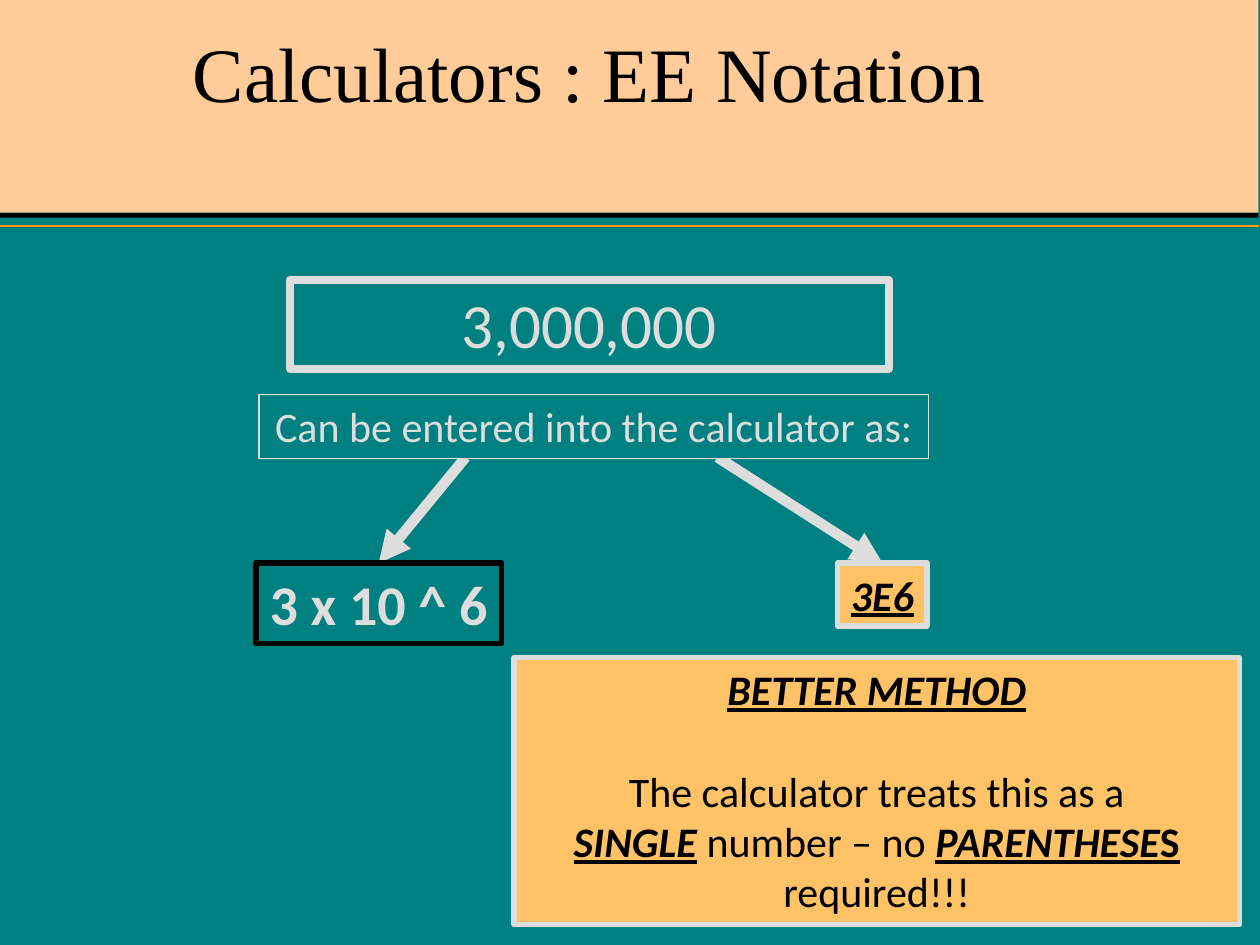
import pptx
import pptx.util
import pptx.dml.color
import pptx.enum.shapes
import pptx.enum.text
import pptx.oxml
import pptx.oxml.ns

Cm = pptx.util.Cm
Pt = pptx.util.Pt
RECTANGLE = pptx.enum.shapes.MSO_SHAPE.RECTANGLE
STRAIGHT = pptx.enum.shapes.MSO_CONNECTOR.STRAIGHT
CENTER = pptx.enum.text.PP_ALIGN.CENTER
ANCHOR = pptx.enum.text.MSO_ANCHOR

COLORS = {
    "teal": "008080",
    "peach": "FFCC99",
    "orange": "FF9900",
    "amber": "FFC266",
    "silver": "DDDDDD",
    "black": "000000",
}

PLAIN = {"name": "Calibri", "size": Pt(24), "bold": False, "italic": False, "underline": False}
STRONG = {**PLAIN, "bold": True, "italic": True, "underline": True}
UPRIGHT = {**STRONG, "italic": False}
NUMBER = {**PLAIN, "size": Pt(36)}
POWER = {**PLAIN, "size": Pt(32), "bold": True}
TITLE = {**PLAIN, "name": "Times New Roman", "size": Pt(44)}


def rgb(color):
    return pptx.dml.color.RGBColor.from_string(COLORS[color])


def set_attributes(target, values):
    for name, value in values.items():
        setattr(target, name, value)


def write_paragraph(paragraph, runs, color):
    paragraph.alignment = CENTER
    for text, font_format in runs:
        run = paragraph.add_run()
        run.text = text
        set_attributes(run.font, font_format)
        run.font.color.rgb = rgb(color)


def add_box(slide, box, fill, line=None, width=0, paragraphs=(), color="silver", wrap=True):
    shape = slide.shapes.add_shape(RECTANGLE, *map(Cm, box))
    shape.shadow.inherit = False
    shape.fill.solid()
    shape.fill.fore_color.rgb = rgb(fill)
    if line:
        shape.line.color.rgb = rgb(line)
        shape.line.width = Pt(width)
    else:
        shape.line.fill.background()
    frame = shape.text_frame
    set_attributes(frame, {"word_wrap": wrap, "vertical_anchor": ANCHOR.TOP})
    for index, runs in enumerate(paragraphs):
        paragraph = frame.add_paragraph() if index else frame.paragraphs[0]
        write_paragraph(paragraph, runs, color)
    return shape


def add_line(slide, start, end, color, width, arrow=False):
    connector = slide.shapes.add_connector(STRAIGHT, *map(Cm, (*start, *end)))
    connector.line.color.rgb = rgb(color)
    connector.line.width = Pt(width)
    if arrow:
        tail = pptx.oxml.parse_xml(
            f'<a:tailEnd {pptx.oxml.ns.nsdecls("a")} type="triangle"/>')
        connector.line._get_or_add_ln().append(tail)
    properties = connector._element.spPr
    properties.append(pptx.oxml.parse_xml(f'<a:effectLst {pptx.oxml.ns.nsdecls("a")}/>'))
    return connector


def add_header(slide, box):
    left, top, width, height = box
    add_box(slide, box, "peach")
    add_box(slide, (left, top + height, width, 0.1), "black")
    rule = top + height + 0.26
    add_line(slide, (left, rule), (left + width, rule), "orange", 1)

    title = slide.shapes.title
    set_attributes(title, {"left": Cm(left + 0.46), "top": Cm(top + 0.53),
                           "width": Cm(22.86), "height": Cm(1.98)})
    set_attributes(title.text_frame, {"word_wrap": True, "vertical_anchor": ANCHOR.BOTTOM})
    write_paragraph(title.text_frame.paragraphs[0],
                    [("Calculators : EE Notation", TITLE)], "black")


def add_branch(slide, start, box, **box_format):
    left, top, width, height = box
    arrow = add_line(slide, start, (left + width / 2, top), "silver", 6, arrow=True)
    answer = add_box(slide, box, **box_format)
    arrow.end_connect(answer, 0)


def add_entry_diagram(slide, box):
    left, top, width, height = box
    middle = left + width / 2
    label_top = top + 2.31
    arrow_top = top + 3.58
    answer_top = top + height - 1.63

    add_box(slide, (middle - 6.08, top, 12.07, 1.8), "teal", "silver", 4.5,
            [[("3,000,000", NUMBER)]])
    add_branch(slide, (middle - 2.54, arrow_top), (left, answer_top, 4.95, 1.63),
               fill="teal", line="black", width=3,
               paragraphs=[[("3 x 10 ^ 6", POWER)]], wrap=False)
    add_branch(slide, (middle + 2.54, arrow_top),
               (left + width - 1.8, answer_top, 1.8, 1.27),
               fill="amber", line="silver", width=3,
               paragraphs=[[("3E6", STRONG)]], color="black")
    add_box(slide, (middle - 6.7, label_top, 13.49, 1.3), "teal", "silver", 0.75,
            [[("Can be entered into the calculator as:", PLAIN)]], wrap=False)


def add_method_note(slide, box):
    paragraphs = [
        [("BETTER METHOD", STRONG)],
        [("The calculator treats this as a", PLAIN)],
        [("SINGLE", STRONG), (" number – no ", PLAIN),
         ("PARENTHESE", STRONG), ("S", UPRIGHT)],
        [("required!!!", PLAIN)],
    ]
    note = add_box(slide, box, "amber", "silver", 3, paragraphs, "black")
    note.text_frame.paragraphs[1].space_before = Pt(29)


def main():
    presentation = pptx.Presentation()
    set_attributes(presentation, {"slide_width": Cm(25.4), "slide_height": Cm(19.05)})
    slide = presentation.slides.add_slide(presentation.slide_layouts[5])
    slide.background.fill.solid()
    slide.background.fill.fore_color.rgb = rgb("teal")

    add_header(slide, (0, 0, 25.37, 4.29))
    title = slide.shapes.title._element
    title.getparent().append(title)
    add_entry_diagram(slide, (5.16, 5.64, 13.53, 7.34))
    add_method_note(slide, (10.36, 13.26, 14.63, 5.38))
    presentation.save("out.pptx")


if __name__ == "__main__":
    main()
